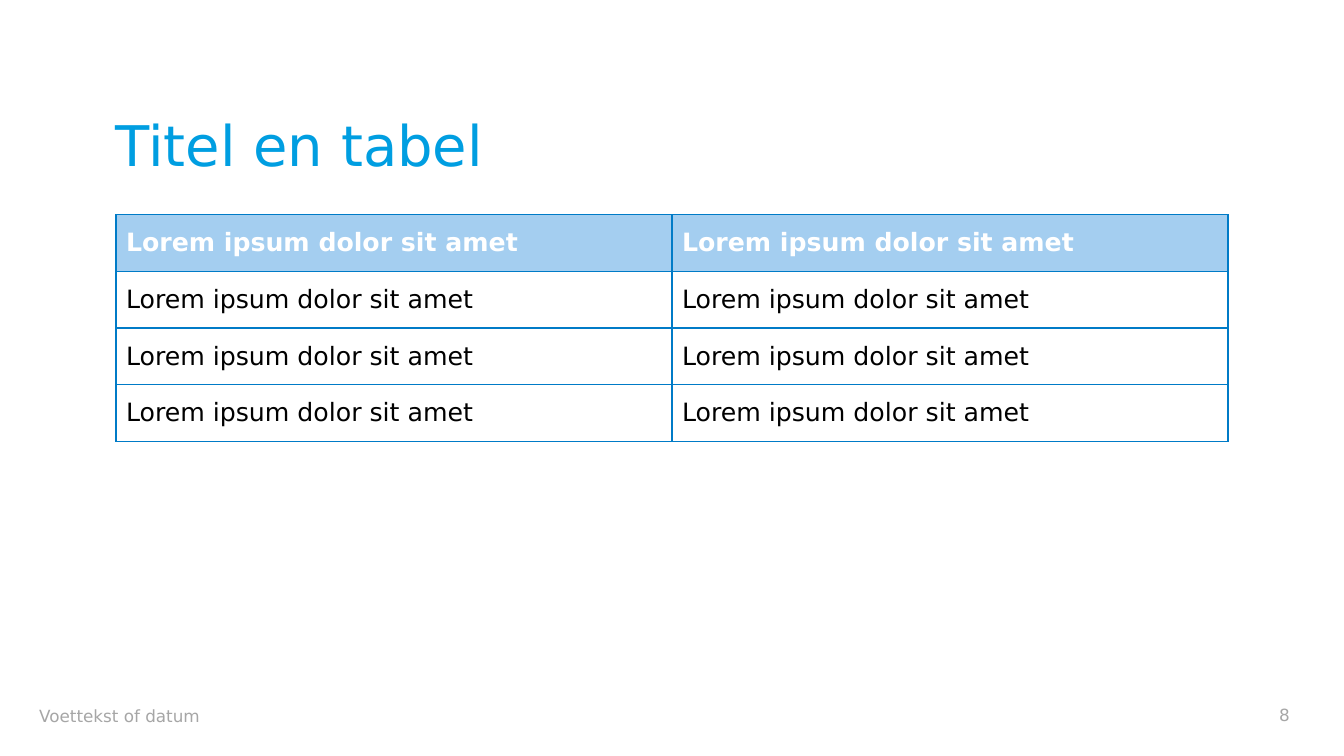
from lxml import etree
from pptx import Presentation
from pptx.dml.color import RGBColor
from pptx.enum.text import MSO_ANCHOR, MSO_AUTO_SIZE, PP_ALIGN
from pptx.oxml.ns import qn
from pptx.util import Inches, Pt

LEFT, RIGHT = PP_ALIGN.LEFT, PP_ALIGN.RIGHT
TOP, MIDDLE = MSO_ANCHOR.TOP, MSO_ANCHOR.MIDDLE
NO_AUTOFIT = MSO_AUTO_SIZE.NONE

TITLE_BLUE = RGBColor(0x00, 0x9E, 0xE1)
BORDER_BLUE = RGBColor(0x00, 0x7B, 0xC7)
HEADER_BLUE = RGBColor(0xA4, 0xCE, 0xF0)
FOOTER_GRAY = RGBColor(0xA6, 0xA6, 0xA6)
WHITE = RGBColor(0xFF, 0xFF, 0xFF)
BLACK = RGBColor(0x00, 0x00, 0x00)

TITLE_ONLY_LAYOUT = 5
CELL_TEXT = "Lorem ipsum dolor sit amet"
TABLE_ROWS = [[CELL_TEXT] * 2 for _ in range(4)]


class SlideBuilder:
    font_name = "DejaVu Sans"

    def __init__(self, presentation):
        layout = presentation.slide_layouts[TITLE_ONLY_LAYOUT]
        self.slide = presentation.slides.add_slide(layout)

    def set_text(self, frame, text, size, color, align=LEFT, bold=False):
        paragraph = frame.paragraphs[0]
        paragraph.text = text
        paragraph.alignment = align
        font = paragraph.font
        font.name, font.size, font.bold = self.font_name, Pt(size), bold
        font.color.rgb = color

    def title(self, text, left, top, width, height):
        shape = self.slide.shapes.title
        shape.left, shape.top = Inches(left), Inches(top)
        shape.width, shape.height = Inches(width), Inches(height)
        frame = shape.text_frame
        frame.auto_size = NO_AUTOFIT
        frame.vertical_anchor = MIDDLE
        frame.margin_left = 0
        self.set_text(frame, text, 40, TITLE_BLUE)

    def footer(self, text, left, top, width, height, align=LEFT, anchor=TOP):
        shape = self.slide.shapes.add_textbox(
            Inches(left), Inches(top), Inches(width), Inches(height))
        frame = shape.text_frame
        frame.word_wrap = True
        frame.vertical_anchor = anchor
        self.set_text(frame, text, 12, FOOTER_GRAY, align)

    def table(self, rows, left, top, width, height):
        table = self.slide.shapes.add_table(
            len(rows), len(rows[0]),
            Inches(left), Inches(top), Inches(width), Inches(height)).table
        table.horz_banding = False
        for row_index, row in enumerate(rows):
            is_header = row_index == 0
            for column_index, text in enumerate(row):
                cell = table.cell(row_index, column_index)
                cell.vertical_anchor = MIDDLE
                self.cell_borders(cell)
                if is_header:
                    cell.fill.solid()
                    cell.fill.fore_color.rgb = HEADER_BLUE
                else:
                    cell.fill.background()
                self.set_text(cell.text_frame, text, 18,
                              WHITE if is_header else BLACK, bold=is_header)

    def cell_borders(self, cell):
        """Outline all four sides; call before filling, as XML order matters."""
        properties = cell._tc.get_or_add_tcPr()
        for side in ("a:lnL", "a:lnR", "a:lnT", "a:lnB"):
            line = etree.SubElement(properties, qn(side), w=str(Pt(1)))
            fill = etree.SubElement(line, qn("a:solidFill"))
            etree.SubElement(fill, qn("a:srgbClr"), val=str(BORDER_BLUE))


def main():
    presentation = Presentation()
    presentation.slide_width = Inches(13.33)
    presentation.slide_height = Inches(7.5)
    builder = SlideBuilder(presentation)
    builder.title("Titel en tabel", 1.15, 0.8, 11.51, 1.25)
    builder.footer("Voettekst of datum", 0.29, 6.95, 4.22, 0.4)
    builder.footer("8", 9.78, 6.95, 3.11, 0.29, RIGHT, MIDDLE)
    builder.table(TABLE_ROWS, 1.15, 2.13, 11.03, 2.25)
    presentation.save("out.pptx")


if __name__ == "__main__":
    main()
